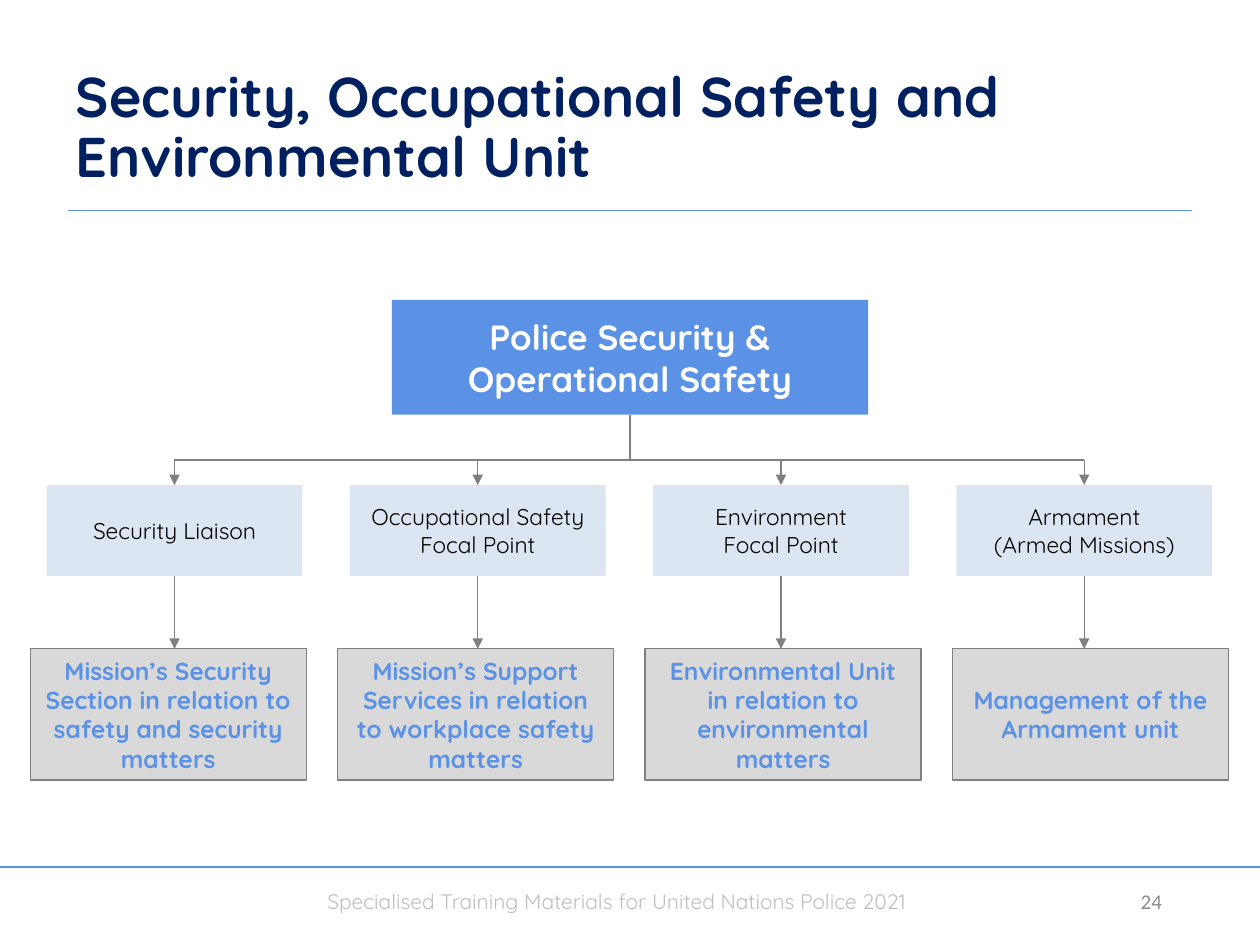
from dataclasses import dataclass
from lxml.etree import SubElement
from pptx import Presentation
from pptx.dml.color import RGBColor
from pptx.enum.shapes import MSO_CONNECTOR as Conn, MSO_SHAPE as Shape
from pptx.enum.text import MSO_ANCHOR as Anchor, MSO_AUTO_SIZE as AutoSize, PP_ALIGN as Align
from pptx.oxml.ns import qn
from pptx.util import Inches, Pt


@dataclass(frozen=True)
class Theme:
    font: str = "Quicksand"
    number_font: str = "Calibri"
    navy: str = "002060"
    blue: str = "5B92E5"
    pale: str = "DCE6F2"
    panel: str = "D9D9D9"
    gray: str = "808080"
    footer: str = "BFBFBF"
    number: str = "8C8C8C"
    white: str = "FFFFFF"
    black: str = "000000"
    title_pt: float = 32
    title_leading: float = 34.4
    root_pt: float = 20
    duty_pt: float = 14
    unit_pt: float = 13
    footer_pt: float = 12
    line_pt: float = 0.75


THEME = Theme()
COLS, ROWS = 100, 75  # slide grid
CELL = Inches(0.1)

BRANCHES = [
    ("Security Liaison",
     "Mission’s Security Section in relation to safety and security matters"),
    ("Occupational Safety Focal Point",
     "Mission’s Support Services in relation to workplace safety matters"),
    ("Environment\nFocal Point",
     "Environmental Unit in relation to environmental matters"),
    ("Armament\n(Armed Missions)",
     "Management of the Armament unit"),
]


@dataclass(frozen=True)
class Box:
    """A rectangle in grid columns and rows."""
    x: float
    y: float
    w: float
    h: float

    @property
    def mid(self):
        return self.x + self.w / 2

    @property
    def bottom(self):
        return self.y + self.h

    def inner(self, x, y, w, h):
        """Box offset from this one's top left corner."""
        return Box(self.x + x, self.y + y, w, h)

    def columns(self, n, width):
        """n equal boxes of the given width, spread from edge to edge."""
        step = (self.w - width) / (n - 1)
        return [self.inner(i * step, 0, width, self.h) for i in range(n)]

    def emu(self):
        return [round(v * CELL) for v in (self.x, self.y, self.w, self.h)]


def rgb(color):
    return RGBColor.from_string(color)


def write(sp, text, size, color, bold=False, font=THEME.font,
          align=Align.CENTER, anchor=Anchor.MIDDLE):
    tf = sp.text_frame
    tf.word_wrap = True
    tf.auto_size = AutoSize.NONE
    tf.vertical_anchor = anchor
    p = tf.paragraphs[0]
    p.alignment = align
    for i, line in enumerate(text.split("\n")):
        if i:
            p.add_line_break()
        r = p.add_run()
        r.text = line
        r.font.name, r.font.size, r.font.bold = font, Pt(size), bold
        r.font.color.rgb = rgb(color)
    return p


def add_box(slide, box, fill, line=None, kind=Shape.RECTANGLE):
    sp = slide.shapes.add_shape(kind, *box.emu())
    sp.shadow.inherit = False
    sp.fill.solid()
    sp.fill.fore_color.rgb = rgb(fill)
    if kind == Shape.ROUNDED_RECTANGLE:
        sp.adjustments[0] = 0
    if line:
        sp.line.color.rgb = rgb(line)
        sp.line.width = Pt(THEME.line_pt)
    else:
        sp.line.fill.background()
    return sp


def add_line(slide, x1, y1, x2, y2, color=THEME.gray, arrow=False):
    ends = [round(v * CELL) for v in (x1, y1, x2, y2)]
    s = slide.shapes.add_connector(Conn.STRAIGHT, *ends)
    s.line.color.rgb = rgb(color)
    s.line.width = Pt(THEME.line_pt)
    props = s._element.spPr
    if arrow:
        SubElement(props.find(qn("a:ln")), qn("a:tailEnd"), type="triangle")
    SubElement(props, qn("a:effectLst"))


def add_header(slide, box):
    title = slide.shapes.title
    title.left, title.top, title.width, title.height = box.inner(0, 0, 78.3, 10.5).emu()
    p = write(title, "Security, Occupational Safety and Environmental Unit",
              THEME.title_pt, THEME.navy, True, align=Align.LEFT, anchor=Anchor.BOTTOM)
    p.line_spacing = Pt(THEME.title_leading)
    add_line(slide, box.x + 0.4, box.bottom, box.x + box.w - 0.4, box.bottom, THEME.blue)


def add_chart_tree(slide, box):
    """Root box, a row of units, and the duty under each unit."""
    root = box.inner(28.7, 0, 37.8, 9.1)
    units = box.inner(1.3, 14.7, 92.5, 7.2).columns(len(BRANCHES), 20.3)
    duties = box.inner(0, 27.7, box.w, 10.4).columns(len(BRANCHES), 21.9)
    bus = box.y + 12.7

    sp = add_box(slide, root, THEME.blue, kind=Shape.ROUNDED_RECTANGLE)
    write(sp, "Police Security & Operational Safety", THEME.root_pt, THEME.white, True)
    add_line(slide, root.mid, root.bottom, root.mid, bus)
    add_line(slide, units[0].mid, bus, units[-1].mid, bus)

    for (unit_text, duty_text), unit, duty in zip(BRANCHES, units, duties):
        sp = add_box(slide, unit, THEME.pale, kind=Shape.ROUNDED_RECTANGLE)
        write(sp, unit_text, THEME.unit_pt, THEME.black)
        sp = add_box(slide, duty, THEME.panel, THEME.gray)
        write(sp, duty_text, THEME.duty_pt, THEME.blue, True)
        add_line(slide, unit.mid, bus, unit.mid, unit.y, arrow=True)
        add_line(slide, unit.mid, unit.bottom, unit.mid, duty.y, arrow=True)


def add_footer(slide, box):
    add_line(slide, box.x, box.y, box.x + box.w, box.y, THEME.blue)
    credit = slide.shapes.add_textbox(*box.inner(25, 1.2, 50, 3).emu())
    write(credit, "Specialised Training Materials for United Nations Police 2021",
          THEME.footer_pt, THEME.footer, align=Align.LEFT, anchor=Anchor.TOP)
    number = slide.shapes.add_textbox(*box.inner(86, 0.7, 7.2, 4).emu())
    write(number, "24", THEME.footer_pt, THEME.number,
          font=THEME.number_font, align=Align.RIGHT)


def main():
    prs = Presentation()
    prs.slide_width, prs.slide_height = COLS * CELL, ROWS * CELL
    slide = prs.slides.add_slide(prs.slide_layouts[5])
    add_header(slide, Box(5, 5, 90, 11.7))
    add_chart_tree(slide, Box(2.4, 23.8, 95.1, 38.1))
    add_footer(slide, Box(0, 68.8, COLS, 6.2))
    prs.save("out.pptx")


if __name__ == "__main__":
    main()
